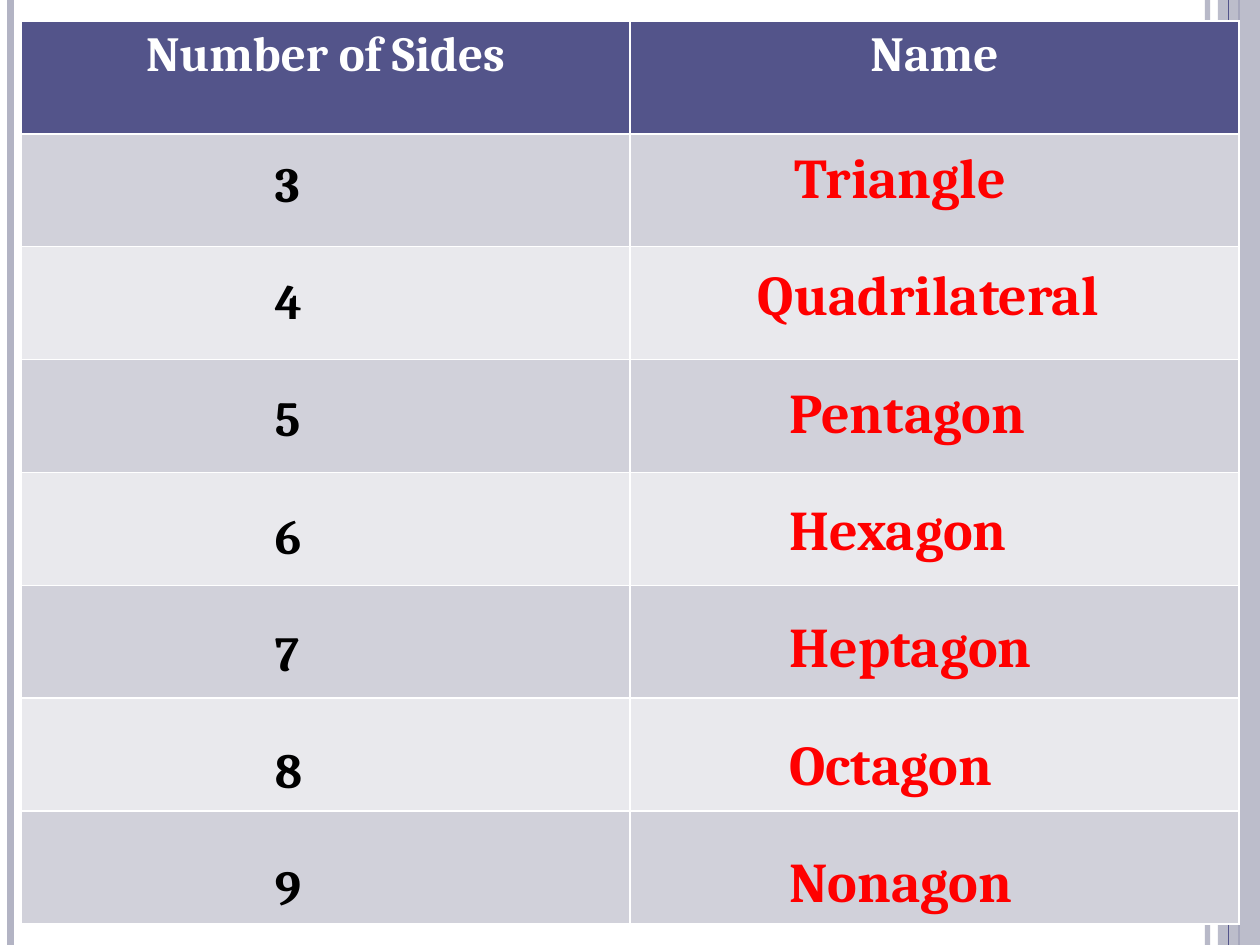
from lxml.etree import SubElement
from pptx import Presentation
from pptx.dml.color import RGBColor
from pptx.enum.shapes import MSO_CONNECTOR, MSO_SHAPE
from pptx.enum.text import MSO_AUTO_SIZE, PP_ALIGN
from pptx.oxml.ns import qn
from pptx.util import Inches, Pt

INDIGO = RGBColor(0x53, 0x54, 0x8A)
LAVENDER = RGBColor(0xB3, 0xB4, 0xC4)
BAND_DARK = RGBColor(0xD1, 0xD1, 0xDA)
BAND_LIGHT = RGBColor(0xE9, 0xE9, 0xED)
WHITE = RGBColor(0xFF, 0xFF, 0xFF)
BLACK = RGBColor(0, 0, 0)
RED = RGBColor(0xFF, 0, 0)

COLS, ROWS = 120, 90
HEADERS = ["Number of Sides", "Name"]
# sides, name, left column and width of the name
POLYGONS = [
    (3, "Triangle", 74.5, 34),
    (4, "Quadrilateral", 71, 41),
    (5, "Pentagon", 74, 35),
    (6, "Hexagon", 74, 35),
    (7, "Heptagon", 74, 35),
    (8, "Octagon", 74, 35),
    (9, "Nonagon", 74, 35),
]

prs = Presentation()
prs.slide_width, prs.slide_height = Inches(10), Inches(7.5)
unit = prs.slide_width / COLS
s = prs.slides.add_slide(prs.slide_layouts[6])


def grid(*units):
    return [round(u * unit) for u in units]


def add_run(p, text, size, color):
    r = p.add_run()
    r.text = text
    r.font.name, r.font.size, r.font.bold = "Cambria", Pt(size), True
    r.font.color.rgb = color


# Side stripes, from back to front; the translucent band lies below the last
for col, color, width, alpha in [(115, LAVENDER, 3, 93), (1, LAVENDER, 4.5, 100),
                                 (118, INDIGO, 1.5, 100), (116, LAVENDER, None, 87),
                                 (117, INDIGO, 0.75, 100)]:
    if width is None:
        sp = s.shapes.add_shape(MSO_SHAPE.RECTANGLE, *grid(col, 0, COLS - col, ROWS))
        sp.shadow.inherit = False
        sp.line.fill.background()
        fill = sp.fill
    else:
        sp = s.shapes.add_connector(MSO_CONNECTOR.STRAIGHT, *grid(col, 0, col, ROWS))
        SubElement(sp.line._get_or_add_ln().getparent(), qn("a:effectLst"))
        sp.line.width = Pt(width)
        fill = sp.line.fill
    fill.solid()
    fill.fore_color.rgb = color
    if alpha < 100:
        clr = next(sp._element.spPr.iter(qn("a:srgbClr")))
        SubElement(clr, qn("a:alpha"), val=str(alpha * 1000))

# Banded table: header row plus one row for each polygon
table = s.shapes.add_table(len(POLYGONS) + 1, 2, *grid(2, 2, 116, 86)).table
for i, row in enumerate(table.rows):
    for cell in row.cells:
        cell.fill.solid()
        cell.fill.fore_color.rgb = INDIGO if i == 0 else BAND_DARK if i % 2 else BAND_LIGHT
for cell, header in zip(table.rows[0].cells, HEADERS):
    p = cell.text_frame.paragraphs[0]
    p.alignment = PP_ALIGN.CENTER
    add_run(p, header, 28, WHITE)

# Sides and names, evenly spaced down the table
for i, (sides, name, left, width) in enumerate(POLYGONS):
    step = 11.17 * i
    for text, size, color, box in [
        (str(sides), 28, BLACK, (25, 14 + step, 6, 6.87)),
        (name, 32, RED, (left, 13 + step, width, 7.67)),
    ]:
        tf = s.shapes.add_textbox(*grid(*box)).text_frame
        tf.word_wrap = True
        tf.auto_size = MSO_AUTO_SIZE.SHAPE_TO_FIT_TEXT
        add_run(tf.paragraphs[0], text, size, color)

prs.save("out.pptx")
